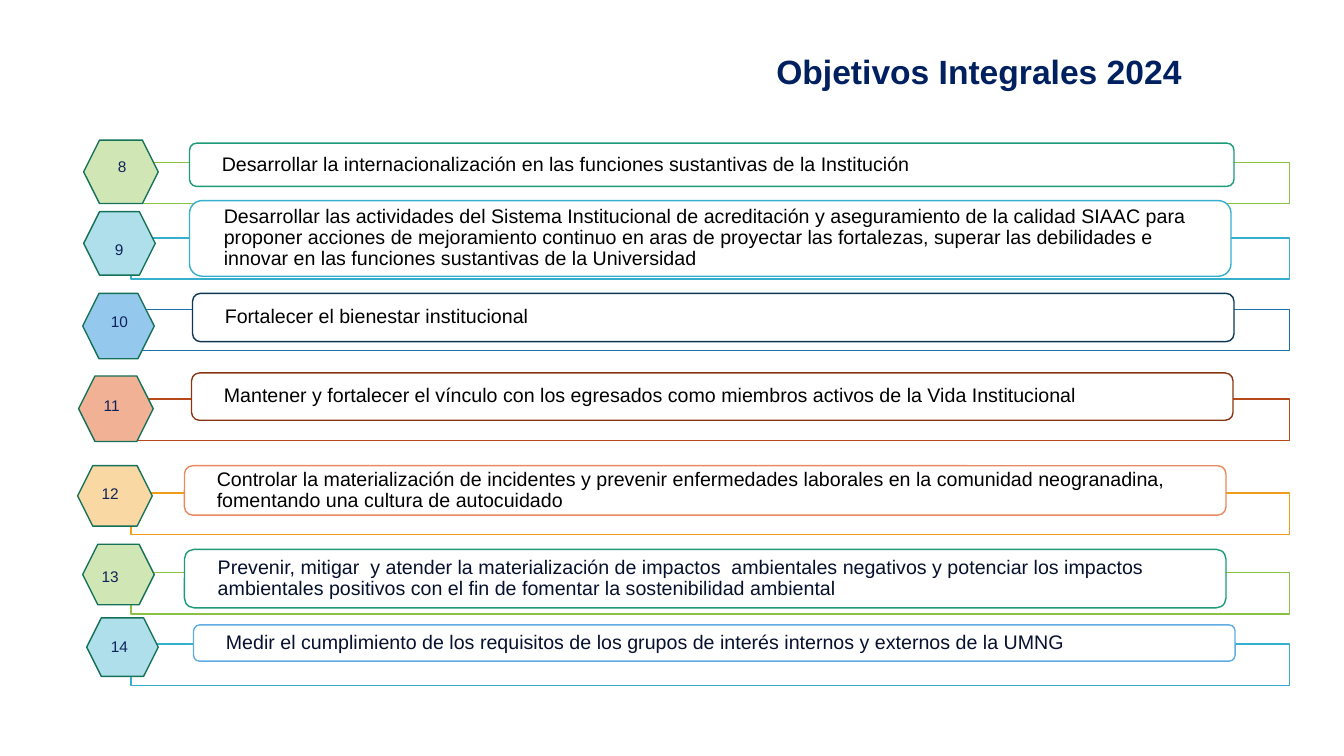
from dataclasses import dataclass

from lxml.etree import SubElement
from pptx import Presentation
from pptx.dml.color import RGBColor
from pptx.enum.shapes import MSO_SHAPE
from pptx.enum.text import MSO_ANCHOR, MSO_AUTO_SIZE, PP_ALIGN
from pptx.oxml.ns import qn
from pptx.shapes.autoshape import Shape
from pptx.slide import Slide
from pptx.text.text import TextFrame
from pptx.util import Pt

PX = 9144  # 100 px to the inch
FONT = "Arial"
Box = tuple[int, int, int, int]

COLORS = {
    "white": "FFFFFF", "black": "000000", "title": "002060",
    "ink": "07112D", "digit": "0F235A", "edge": "157259",
    "lime": "8BC145", "teal": "1D9A78", "cyan": "36AFCE",
    "blue": "1D6FA9", "navy": "0F3754", "rust": "B74919",
    "brown": "893713", "gold": "F19D19", "coral": "E98960", "sky": "5FADE4",
    "pale lime": "D1E6B5", "pale cyan": "AFDFEB", "pale blue": "94C8ED",
    "pale rust": "F0B195", "pale gold": "F9D8A3",
}


@dataclass
class Goal:
    text: str
    ink: str
    strip_y: int
    strip: str
    bar: Box
    edge: str
    hexa: Box
    fill: str
    label: tuple[int, int, int]  # left, top, width


FIRST = 8
GOALS = [
    Goal("Desarrollar la internacionalización en las funciones sustantivas de la Institución",
         "black", 161, "lime", (188, 142, 1036, 43), "teal",
         (83, 139, 74, 63), "pale lime", (107, 151, 34)),
    Goal("Desarrollar las actividades del Sistema Institucional de acreditación y "
         "aseguramiento de la calidad SIAAC para proponer acciones de mejoramiento "
         "continuo en aras de proyectar las fortalezas, superar las debilidades e "
         "innovar en las funciones sustantivas de la Universidad",
         "black", 236, "cyan", (188, 199, 1033, 75), "cyan",
         (83, 210, 71, 63), "pale cyan", (104, 233, 34)),
    Goal("Fortalecer el bienestar institucional",
         "black", 307, "blue", (191, 291, 1033, 48), "navy",
         (82, 291, 71, 65), "pale blue", (100, 305, 65)),
    Goal("Mantener y fortalecer el vínculo con los egresados como miembros activos "
         "de la Vida Institucional",
         "black", 396, "rust", (190, 370, 1033, 47), "brown",
         (78, 373, 74, 65), "pale rust", (93, 388, 65)),
    Goal("Controlar la materialización de incidentes y prevenir enfermedades "
         "laborales en la comunidad neogranadina, fomentando una cultura de autocuidado",
         "black", 489, "gold", (183, 462, 1033, 49), "coral",
         (77, 462, 74, 60), "pale gold", (91, 475, 65)),
    Goal("Prevenir, mitigar  y atender la materialización de impactos  ambientales "
         "negativos y potenciar los impactos ambientales positivos con el fin de "
         "fomentar la sostenibilidad ambiental",
         "ink", 568, "lime", (183, 545, 1033, 58), "teal",
         (82, 540, 71, 60), "pale lime", (91, 558, 65)),
    Goal("Medir el cumplimiento de los requisitos de los grupos de interés internos "
         "y externos de la UMNG",
         "ink", 639, "cyan", (192, 620, 1033, 36), "sky",
         (86, 613, 71, 58), "pale cyan", (100, 627, 65)),
]


def color(name: str) -> RGBColor:
    return RGBColor.from_string(COLORS[name])


def scale(box: Box) -> list[int]:
    return [side * PX for side in box]


def draw(slide: Slide, kind: MSO_SHAPE, box: Box, fill: str, line: str) -> Shape:
    shape = slide.shapes.add_shape(kind, *scale(box))
    shape.shadow.inherit = False
    shape.fill.solid()
    shape.fill.fore_color.rgb = color(fill)
    shape.line.color.rgb = color(line)
    shape.line.width = Pt(1)
    return shape


def fade(shape: Shape, part: int) -> None:
    tone = shape.fill._xPr.find(qn("a:solidFill"))[0]
    SubElement(tone, qn("a:alpha"), val=str(part * 1000))


def write(frame: TextFrame, text: str, size: int, ink: str, bold: bool = False) -> None:
    frame.text = text
    frame.word_wrap = True
    for run in frame.paragraphs[0].runs:
        run.font.name = FONT
        run.font.size = Pt(size)
        run.font.bold = bold
        run.font.color.rgb = color(ink)


def inset(frame: TextFrame, side: int) -> None:
    frame.margin_left = frame.margin_right = side * PX
    frame.margin_top = frame.margin_bottom = 0
    frame.vertical_anchor = MSO_ANCHOR.MIDDLE


def add_title(slide: Slide) -> None:
    title = slide.shapes.title
    title.left, title.top, title.width, title.height = scale((685, 45, 487, 46))
    frame = title.text_frame
    write(frame, "Objetivos Integrales 2024", 24, "title", True)
    inset(frame, 0)
    frame.auto_size = MSO_AUTO_SIZE.SHAPE_TO_FIT_TEXT
    frame.paragraphs[0].alignment = PP_ALIGN.RIGHT
    frame.paragraphs[0].line_spacing = 1.14


def add_bar(slide: Slide, goal: Goal) -> None:
    strip = draw(slide, MSO_SHAPE.RECTANGLE, (130, goal.strip_y, 1149, 41),
                 "white", goal.strip)
    fade(strip, 90)
    draw(slide, MSO_SHAPE.ROUNDED_RECTANGLE, goal.bar, "white", goal.edge)
    # The text stays clear of the rounded corners
    x, y, w, h = goal.bar
    gap = round(h * 0.0488)
    area = (x + gap, y + gap, w - 2 * gap, h - 2 * gap)
    frame = slide.shapes.add_textbox(*scale(area)).text_frame
    write(frame, goal.text, 14, goal.ink)
    inset(frame, 30)
    frame.paragraphs[0].line_spacing = 0.9


def add_badge(slide: Slide, goal: Goal, number: int) -> None:
    draw(slide, MSO_SHAPE.HEXAGON, goal.hexa, goal.fill, "edge")
    label = slide.shapes.add_textbox(*scale((*goal.label, 29)))
    write(label.text_frame, str(number), 11, "digit")
    label.text_frame.auto_size = MSO_AUTO_SIZE.SHAPE_TO_FIT_TEXT


def main() -> None:
    deck = Presentation()
    deck.slide_width, deck.slide_height = 1333 * PX, 750 * PX
    slide = deck.slides.add_slide(deck.slide_layouts[5])
    add_title(slide)
    # Goal bars
    for goal in GOALS:
        add_bar(slide, goal)
    # Numbered hexagons
    for number, goal in enumerate(GOALS, FIRST):
        add_badge(slide, goal, number)
    deck.save("out.pptx")


if __name__ == "__main__":
    main()
